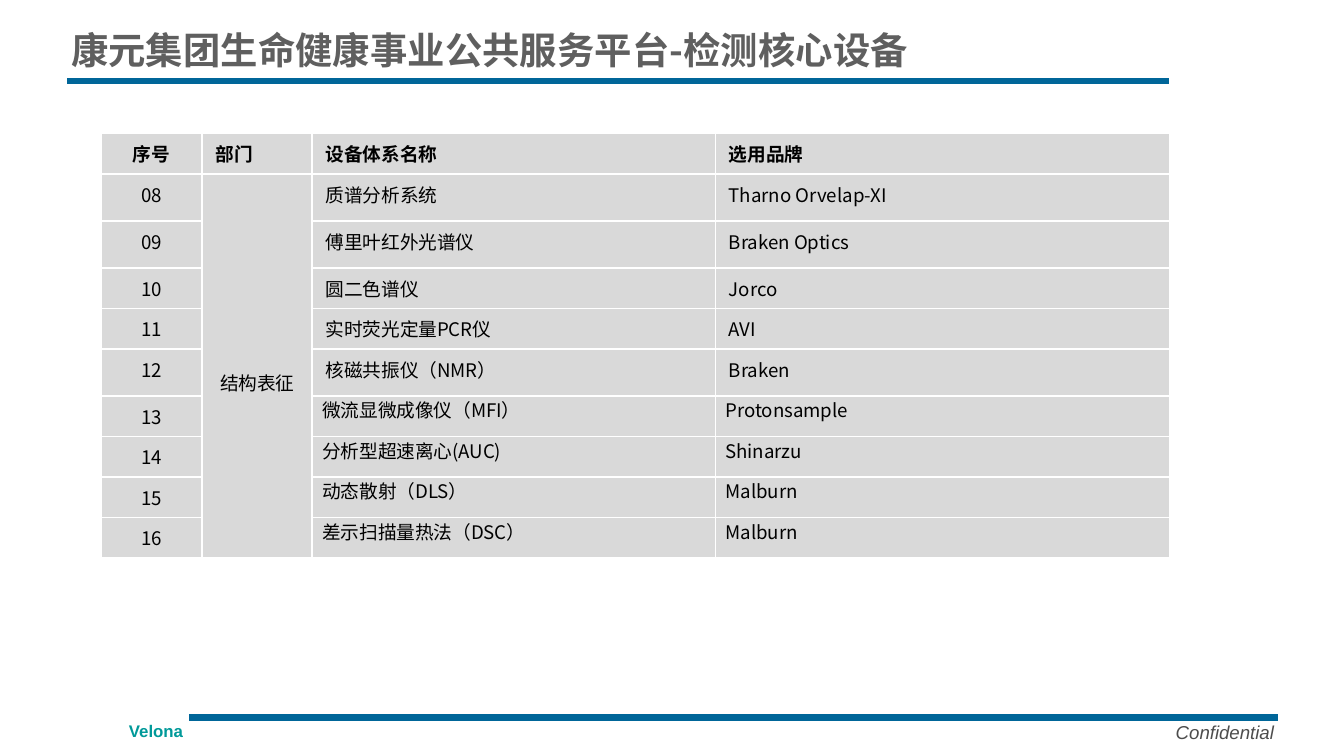
from lxml import etree
from pptx import Presentation
from pptx.dml.color import RGBColor
from pptx.enum.shapes import MSO_CONNECTOR
from pptx.enum.text import MSO_ANCHOR, PP_ALIGN
from pptx.oxml.ns import qn
from pptx.util import Pt

LINE = MSO_CONNECTOR.STRAIGHT
MID, TOP = MSO_ANCHOR.MIDDLE, MSO_ANCHOR.TOP
LEFT, CENTER, JUST = PP_ALIGN.LEFT, PP_ALIGN.CENTER, PP_ALIGN.JUSTIFY
SANS = "Noto Sans CJK SC"


def color(code):
    return RGBColor.from_string(code)


def write(frame, text, size, face, code, bold=False, slant=False, align=LEFT):
    para = frame.paragraphs[0]
    para.alignment = align
    run = para.add_run()
    run.text = text
    font = run.font
    font.size, font.name = Pt(size), face
    font.bold, font.italic = bold, slant
    font.color.rgb = color(code)
    east = etree.SubElement(run._r.get_or_add_rPr(), qn("a:ea"))
    east.set("typeface", face)


deck = Presentation()
deck.slide_width, deck.slide_height = Pt(720), Pt(405)
slide = deck.slides.add_slide(deck.slide_layouts[6])
shapes = slide.shapes

# Rules above the footer and below the title
for x1, x2, y in [(101.5, 684.7, 384.3), (36, 626.4, 43.4)]:
    rule = shapes.add_connector(LINE, Pt(x1), Pt(y), Pt(x2), Pt(y))
    rule.line.color.rgb = color("006699")
    rule.line.width = Pt(3.5)
    etree.SubElement(rule._element.spPr, qn("a:effectLst"))

# Footer and title
labels = [
    (62, 382.5, 68, 18, "Velona", 9, "Arial", "009999", True, False, TOP),
    (622.8, 382.5, 88, 19.5, "Confidential", 10, "Arial", "4D4D4D", False, True, TOP),
    (31, 7.2, 589.7, 38.2, "康元集团生命健康事业公共服务平台-检测核心设备",
     20, SANS, "5F5F5F", True, False, MID),
]
for x, y, w, h, text, size, face, code, bold, slant, anchor in labels:
    frame = shapes.add_textbox(Pt(x), Pt(y), Pt(w), Pt(h)).text_frame
    frame.word_wrap = True
    frame.vertical_anchor = anchor
    write(frame, text, size, face, code, bold, slant)

# Equipment table
head = ["序号", "部门", "设备体系名称", "选用品牌"]
items = [
    ("质谱分析系统", "Tharno Orvelap-XI"),
    ("傅里叶红外光谱仪", "Braken Optics"),
    ("圆二色谱仪", "Jorco"),
    ("实时荧光定量PCR仪", "AVI"),
    ("核磁共振仪（NMR）", "Braken"),
    ("微流显微成像仪（MFI）", "Protonsample"),
    ("分析型超速离心(AUC)", "Shinarzu"),
    ("动态散射（DLS）", "Malburn"),
    ("差示扫描量热法（DSC）", "Malburn"),
]
rows = [head]
for num, (name, brand) in enumerate(items, 8):
    rows.append([f"{num:02}", "结构表征" if num == 8 else "", name, brand])

widths = [54.3, 59, 216, 243.3]
TALL, LOW = 25.2, 21.7
heights = [TALL if i in (1, 2, 5) else LOW for i in range(len(rows))]
table = shapes.add_table(len(rows), len(head), Pt(54), Pt(71.6),
                         Pt(sum(widths)), Pt(sum(heights))).table
table.horz_banding = False
for col, width in zip(table.columns, widths):
    col.width = Pt(width)
for row, height in zip(table.rows, heights):
    row.height = Pt(height)
table.cell(1, 1).merge(table.cell(len(items), 1))

for r, row in enumerate(rows):
    for c, text in enumerate(row):
        cell = table.cell(r, c)
        cell.fill.solid()
        cell.fill.fore_color.rgb = color("D9D9D9")
        if not text:
            continue
        align = CENTER if c == 0 or (c == 1 and r) else LEFT
        # The last four rows sit tight against the cell top
        if r > 5 and c > 1:
            align = JUST
            cell.margin_left = cell.margin_right = Pt(5.4)
            cell.margin_top = cell.margin_bottom = Pt(0)
        write(cell.text_frame, text, 10, SANS, "000000", r == 0, align=align)

# The department label sits a little below the middle
dept = table.cell(1, 1)
dept.vertical_anchor = MID
dept.margin_top = Pt(21.6)

deck.save("out.pptx")
